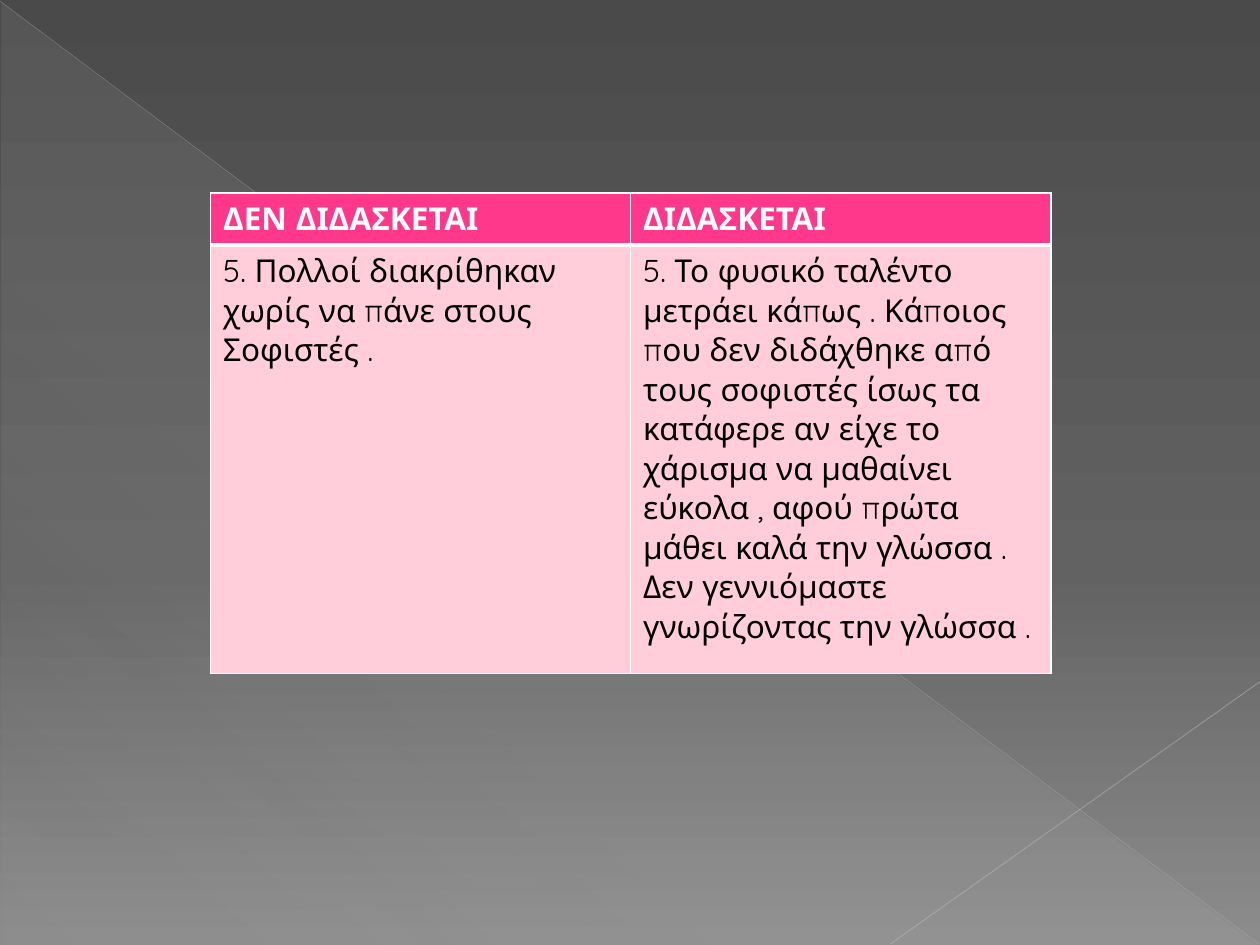
"""Build a slide with a two-column table on whether virtue can be taught."""
from dataclasses import dataclass

from lxml import etree
from pptx import Presentation
from pptx.dml.color import RGBColor
from pptx.enum.shapes import MSO_CONNECTOR, MSO_SHAPE
from pptx.oxml.ns import qn
from pptx.util import Inches, Pt

STRAIGHT = MSO_CONNECTOR.STRAIGHT
RIGHT_TRIANGLE = MSO_SHAPE.RIGHT_TRIANGLE
FONT = "Quicksand"
COLORS = {
    "top": "4A4A4A", "middle": "626262", "bottom": "8C8C8C",
    "veil": "D2D2D2", "long_line": "BFBFBF", "short_line": "C6C6C6",
    "header": "FF388C", "body": "FFCEDA", "white": "FFFFFF", "black": "000000",
}


@dataclass(frozen=True)
class Stop:
    position: int
    color: str
    opacity: int = 100


@dataclass(frozen=True)
class Diagonal:
    start: tuple[float, float]
    end: tuple[float, float]
    color: str
    width: float
    opacity: int


@dataclass(frozen=True)
class TableRow:
    texts: tuple[str, str]
    height: float
    fill: str
    color: str
    bold: bool
    top: int
    bottom: int


BACKDROP = (Stop(0, "top"), Stop(60, "middle"), Stop(100, "bottom"))
VEIL = (Stop(0, "veil", 10), Stop(70, "veil", 8), Stop(100, "veil", 1))
DIAGONALS = (
    Diagonal((0, 0.01), (9.99, 7.49), "long_line", 0.39, 35),
    Diagonal((10, 5.41), (7.07, 7.49), "short_line", 0.47, 45),
)
ROWS = (
    TableRow(("ΔΕΝ ΔΙΔΑΣΚΕΤΑΙ", "ΔΙΔΑΣΚΕΤΑΙ"), 0.41, "header", "white", True, 1, 3),
    TableRow(
        (
            "5. Πολλοί διακρίθηκαν χωρίς να πάνε στους Σοφιστές .",
            "5. Το φυσικό ταλέντο μετράει κάπως . Κάποιος που δεν διδάχθηκε από "
            "τους σοφιστές ίσως τα κατάφερε αν είχε το χάρισμα να μαθαίνει εύκολα , "
            "αφού πρώτα μάθει καλά την γλώσσα . Δεν γεννιόμαστε γνωρίζοντας την γλώσσα .",
        ),
        3.4, "body", "black", False, 3, 1,
    ),
)


def rgb(name: str) -> RGBColor:
    return RGBColor.from_string(COLORS[name])


def add_color(parent, name: str, opacity: int = 100) -> None:
    color = etree.SubElement(parent, qn("a:srgbClr"), val=COLORS[name])
    if opacity < 100:
        etree.SubElement(color, qn("a:alpha"), val=str(opacity * 1000))


def set_gradient(fill, owner, stops: tuple[Stop, ...], angle: int) -> None:
    fill.gradient()
    fill.gradient_angle = 360 - angle
    stop_list = owner.xpath(".//a:gsLst")[0]
    for old_stop in list(stop_list):
        stop_list.remove(old_stop)
    for stop in stops:
        gradient_stop = etree.SubElement(
            stop_list, qn("a:gs"), pos=str(stop.position * 1000))
        add_color(gradient_stop, stop.color, stop.opacity)


def add_veil(slide) -> None:
    veil = slide.shapes.add_shape(
        RIGHT_TRIANGLE, Inches(0.01), Inches(0.02), Inches(9.98), Inches(7.48))
    veil.shadow.inherit = False
    veil.line.fill.background()
    set_gradient(veil.fill, veil.element, VEIL, 133)


def add_diagonal(slide, diagonal: Diagonal) -> None:
    points = [Inches(value) for value in diagonal.start + diagonal.end]
    connector = slide.shapes.add_connector(STRAIGHT, *points)
    connector.line.width = Pt(diagonal.width)
    connector.line.fill.solid()
    solid_fill = connector.element.xpath(".//a:ln/a:solidFill")[0]
    add_color(solid_fill, diagonal.color, diagonal.opacity)
    etree.SubElement(connector.element.spPr, qn("a:effectLst"))


def write(frame, text: str, *, color: str, bold: bool, size: int = 18) -> None:
    run = frame.paragraphs[0].add_run()
    run.text = text
    run.font.name = FONT
    run.font.size = Pt(size)
    run.font.bold = bold
    run.font.color.rgb = rgb(color)


def set_borders(cell, top: int, bottom: int) -> None:
    properties = cell._tc.get_or_add_tcPr()
    sides = {"L": 1, "R": 1, "T": top, "B": bottom}
    for index, (side, width) in enumerate(sides.items()):
        border = etree.Element(qn(f"a:ln{side}"), w=str(Pt(width)))
        add_color(etree.SubElement(border, qn("a:solidFill")), "white")
        properties.insert(index, border)


def add_comparison(slide, rows: tuple[TableRow, ...]) -> None:
    height = sum(row.height for row in rows)
    comparison = slide.shapes.add_table(
        len(rows), 2, Inches(1.67), Inches(1.53), Inches(6.67), Inches(height)).table
    for row_index, row in enumerate(rows):
        comparison.rows[row_index].height = Inches(row.height)
        for column_index, text in enumerate(row.texts):
            cell = comparison.cell(row_index, column_index)
            cell.fill.solid()
            cell.fill.fore_color.rgb = rgb(row.fill)
            set_borders(cell, row.top, row.bottom)
            write(cell.text_frame, text, color=row.color, bold=row.bold)


def main() -> None:
    presentation = Presentation()
    presentation.slide_width = Inches(10)
    presentation.slide_height = Inches(7.5)
    slide = presentation.slides.add_slide(presentation.slide_layouts[6])
    set_gradient(slide.background.fill, slide.element, BACKDROP, 90)
    add_veil(slide)
    for diagonal in DIAGONALS:
        add_diagonal(slide, diagonal)
    add_comparison(slide, ROWS)
    presentation.save("out.pptx")


if __name__ == "__main__":
    main()
